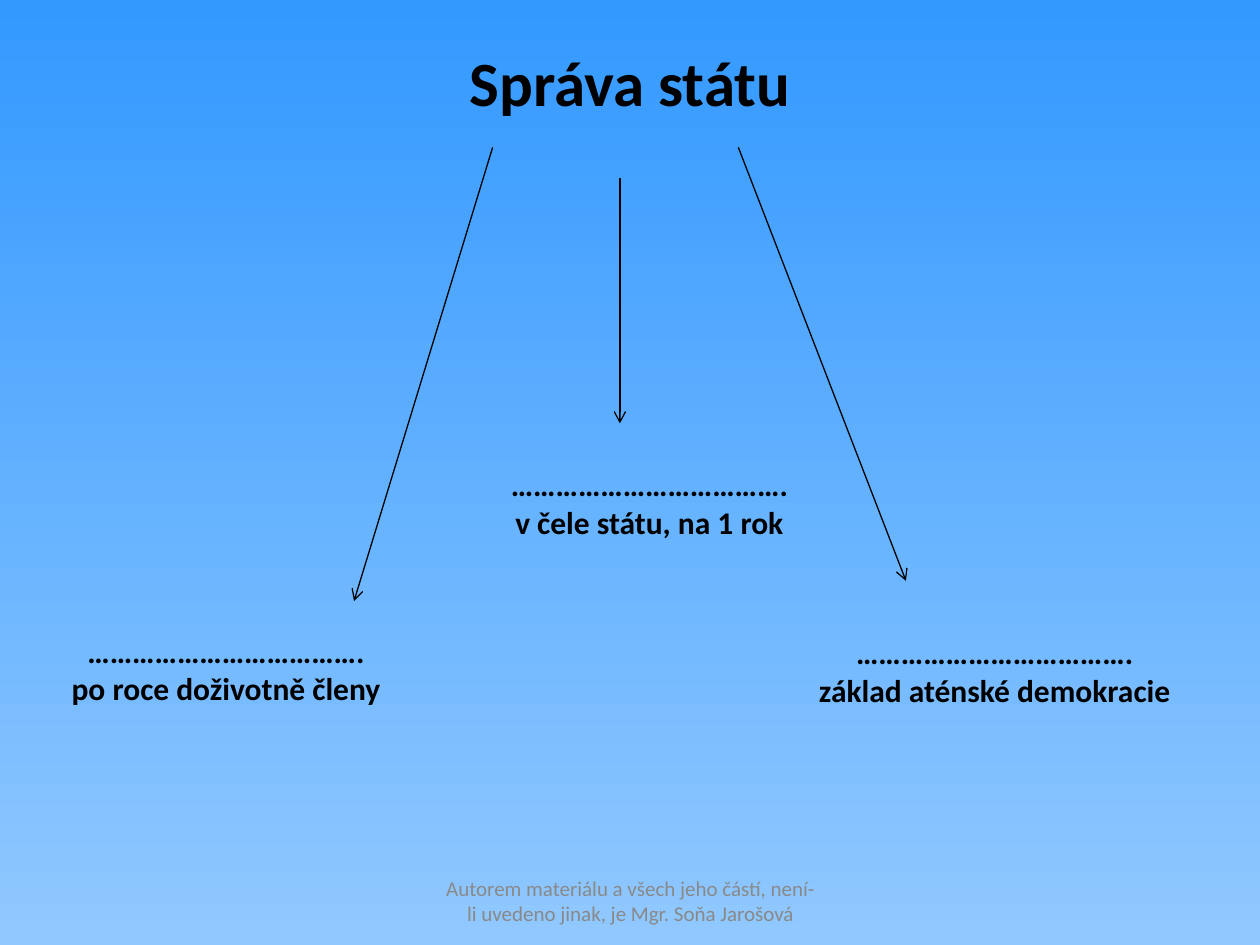
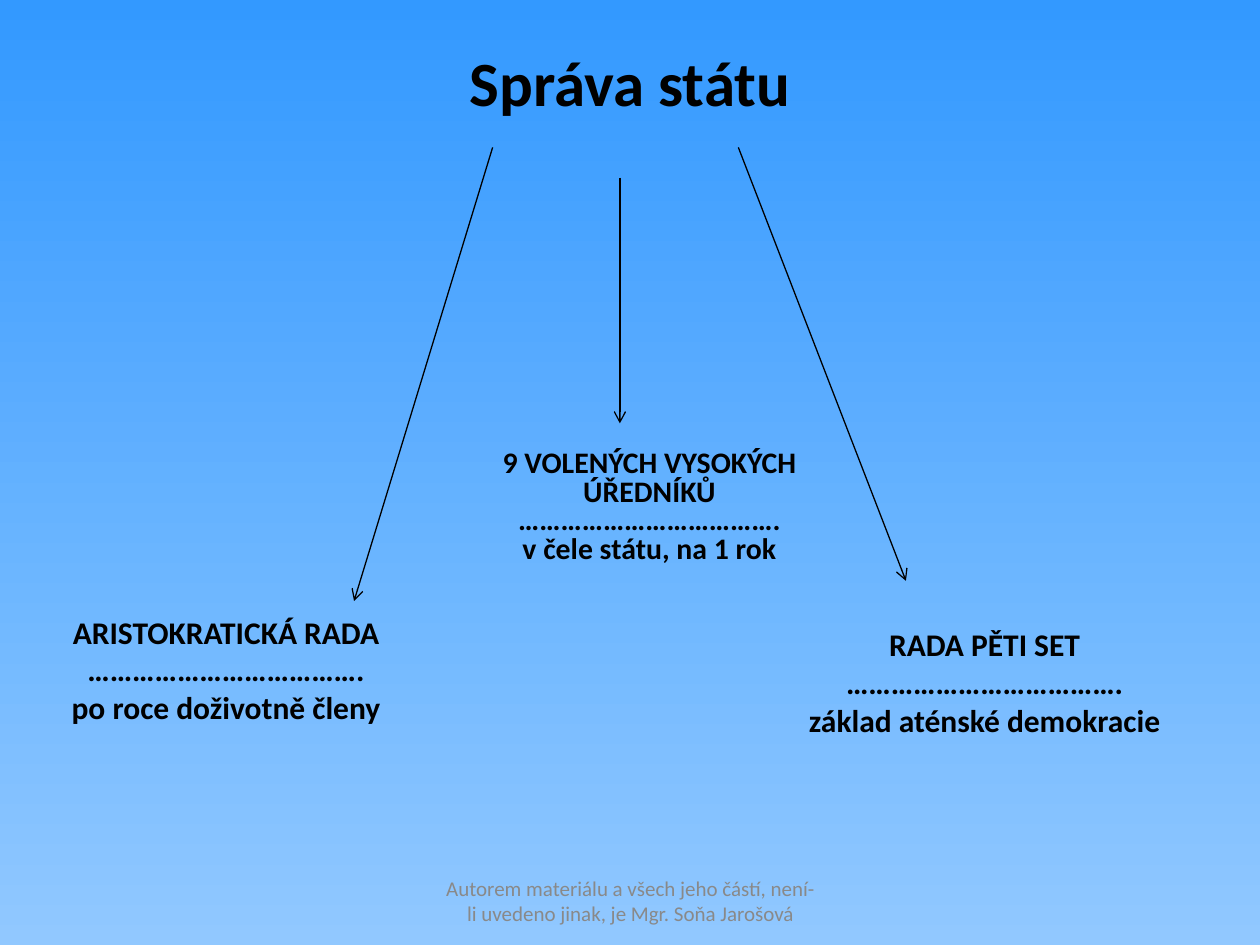
from lxml import etree
from pptx import Presentation
from pptx.dml.color import RGBColor
from pptx.enum.shapes import MSO_CONNECTOR
from pptx.enum.text import MSO_ANCHOR, PP_ALIGN
from pptx.oxml.ns import qn
from pptx.util import Inches, Pt

TOP, MIDDLE = MSO_ANCHOR.TOP, MSO_ANCHOR.MIDDLE
CENTER = PP_ALIGN.CENTER
STRAIGHT = MSO_CONNECTOR.STRAIGHT

BLACK, GREY = "000000", "898989"
BACKGROUND = ("3399FF", "91C8FF")

TITLE = "Správa státu"
FOOTER = "Autorem materiálu a všech jeho částí, není-li uvedeno jinak, je Mgr. Soňa Jarošová"
DOTS = "…" * 12 + "."
OFFICIALS = [DOTS, "v čele státu, na 1 rok"]
COUNCIL = [DOTS, "po roce doživotně členy"]
ASSEMBLY = [DOTS, "základ aténské demokracie"]

TITLE_BOX = (0.5, 0.3, 9, 0.87)
FOOTER_BOX = (3.42, 6.95, 3.17, 0.4)
OFFICIALS_BOX = (3.67, 3.52, 2.97, 1.25)
COUNCIL_BOX = (0.31, 4.84, 2.97, 1.25)

TITLE_FONT = {"size": Pt(36), "bold": True}
FOOTER_FONT = {"size": Pt(12), "bold": False}
BRANCH_FONT = {"size": Pt(18), "bold": True}
TIGHT_FONT = {"size": Pt(17), "bold": True}

ARROWS = [
    ((4.92, 1.41), (4.92, 3.36)),
    ((5.86, 1.17), (7.19, 4.61)),
    ((3.91, 1.17), (2.81, 4.77)),
]

SLIDES = [
    [
        (OFFICIALS_BOX, OFFICIALS, BRANCH_FONT, 1.0),
        (COUNCIL_BOX, COUNCIL, BRANCH_FONT, 1.0),
        ((6.1, 4.77, 3.59, 1.42), ASSEMBLY, BRANCH_FONT, 1.0),
    ],
    [
        (OFFICIALS_BOX, ["9 VOLENÝCH VYSOKÝCH ÚŘEDNÍKŮ"] + OFFICIALS, TIGHT_FONT, 0.8),
        (COUNCIL_BOX, ["ARISTOKRATICKÁ RADA"] + COUNCIL, BRANCH_FONT, 1.0),
        ((6.02, 4.77, 3.59, 1.59), ["RADA PĚTI SET"] + ASSEMBLY, BRANCH_FONT, 1.0),
    ],
]


def rgb(value):
    return RGBColor.from_string(value)


def add_text(s, box, lines, font, color=BLACK, anchor=MIDDLE, spacing=1.0, bottom=0.05):
    tf = s.shapes.add_textbox(*map(Inches, box)).text_frame
    tf.word_wrap = True
    tf.vertical_anchor = anchor
    tf.margin_bottom = Inches(bottom)
    for i, line in enumerate(lines):
        p = tf.paragraphs[0] if i == 0 else tf.add_paragraph()
        p.alignment = CENTER
        p.line_spacing = spacing
        r = p.add_run()
        r.text = line
        r.font.name = "Calibri"
        r.font.color.rgb = rgb(color)
        for name, value in font.items():
            setattr(r.font, name, value)


def add_branch(s, box, lines, font, spacing):
    line_height = font["size"].inches * 1.22 * spacing
    add_text(s, box, lines, font, spacing=spacing, bottom=0.05 + line_height)


def add_arrow(s, start, end):
    arrow = s.shapes.add_connector(STRAIGHT, *map(Inches, start + end))
    arrow.line.color.rgb = rgb(BLACK)
    arrow.line.width = Pt(0.75)
    etree.SubElement(arrow.line._get_or_add_ln(), qn("a:tailEnd"), type="arrow")
    etree.SubElement(arrow._element.spPr, qn("a:effectLst"))


def add_base(prs):
    s = prs.slides.add_slide(prs.slide_layouts[6])
    fill = s.background.fill
    fill.gradient()
    fill.gradient_angle = 270
    for position, (stop, color) in enumerate(zip(fill.gradient_stops, BACKGROUND)):
        stop.position = position
        stop.color.rgb = rgb(color)
    add_text(s, FOOTER_BOX, [FOOTER], FOOTER_FONT, color=GREY)
    add_text(s, TITLE_BOX, [TITLE], TITLE_FONT, anchor=TOP)
    for start, end in ARROWS:
        add_arrow(s, start, end)
    return s


def main():
    prs = Presentation()
    prs.slide_width, prs.slide_height = Inches(10), Inches(7.5)
    for branches in SLIDES:
        s = add_base(prs)
        for branch in branches:
            add_branch(s, *branch)
    prs.save("out.pptx")


if __name__ == "__main__":
    main()
